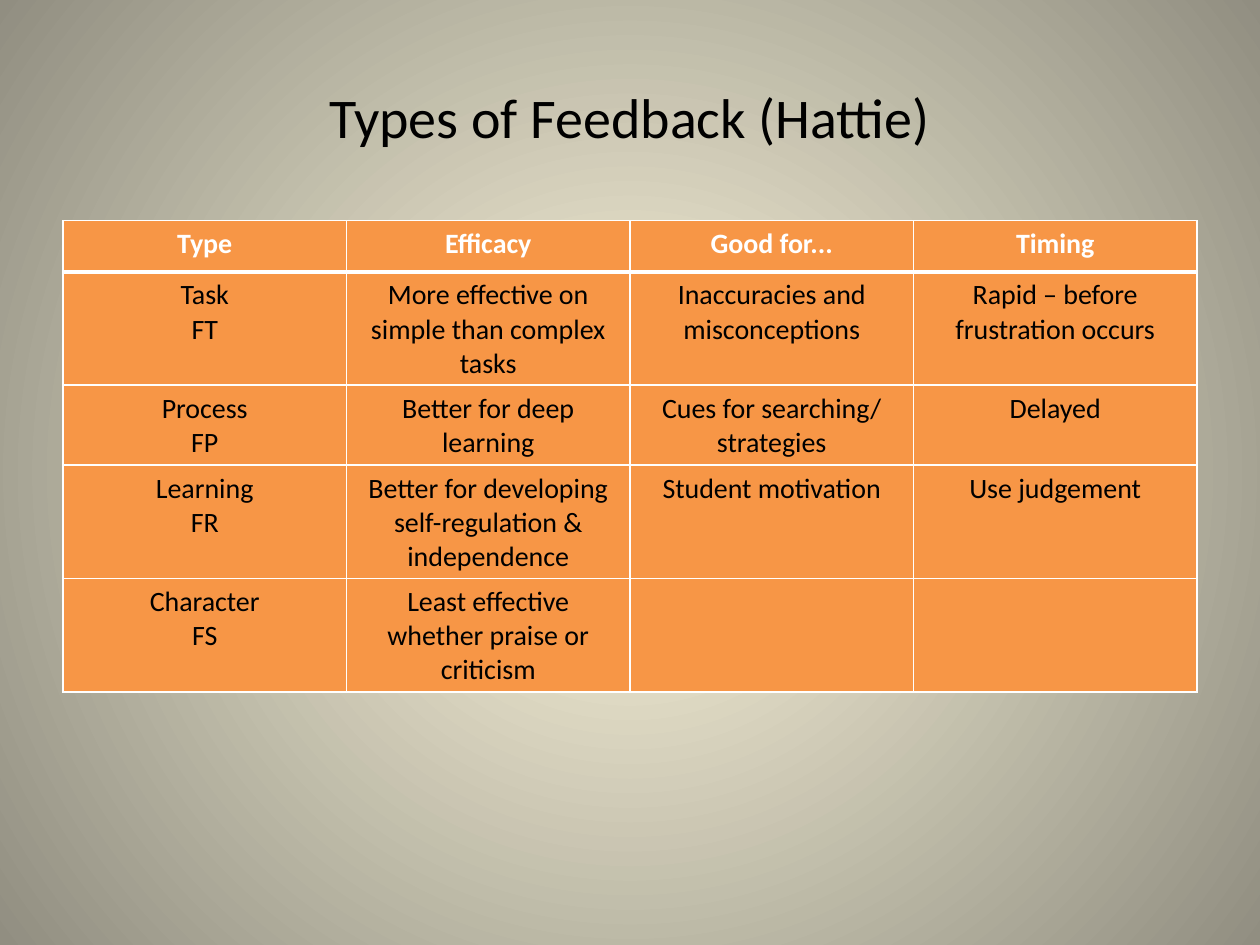
from dataclasses import dataclass

from lxml import etree
from pptx import Presentation
from pptx.dml.color import RGBColor
from pptx.enum.text import MSO_ANCHOR, PP_ALIGN
from pptx.oxml.ns import qn
from pptx.slide import Slide
from pptx.table import _Cell
from pptx.text.text import TextFrame
from pptx.util import Cm, Pt

CENTER = PP_ALIGN.CENTER
MIDDLE = MSO_ANCHOR.MIDDLE
BLACK = RGBColor(0x00, 0x00, 0x00)
WHITE = RGBColor(0xFF, 0xFF, 0xFF)
ORANGE = RGBColor(0xF7, 0x96, 0x46)
CREAM = RGBColor(0xFC, 0xF7, 0xDD)
STONE = RGBColor(0x91, 0x8E, 0x81)
FONT = "Calibri"
LEFT, WIDTH = Cm(1.27), Cm(22.86)


@dataclass(frozen=True)
class Style:
    size: int
    color: RGBColor
    bold: bool = False


@dataclass(frozen=True)
class Kind:
    name: str
    code: str
    effect: str
    use: str = ""
    timing: str = ""

    def cells(self) -> list[list[str]]:
        return [[self.name, self.code], [self.effect], [self.use], [self.timing]]


TITLE = Style(32, BLACK)
HEAD = Style(16, WHITE, True)
BODY = Style(16, BLACK)
HEADS = ["Type", "Efficacy", "Good for...", "Timing"]
KINDS = [
    Kind("Task", "FT", "More effective on simple than complex tasks",
         "Inaccuracies and misconceptions", "Rapid – before frustration occurs"),
    Kind("Process", "FP", "Better for deep learning",
         "Cues for searching/ strategies", "Delayed"),
    Kind("Learning", "FR", "Better for developing self-regulation & independence",
         "Student motivation", "Use judgement"),
    Kind("Character", "FS", "Least effective whether praise or criticism"),
]


def write(frame: TextFrame, lines: list[str], style: Style) -> None:
    for index, line in enumerate(lines):
        para = frame.paragraphs[0] if index == 0 else frame.add_paragraph()
        para.alignment = CENTER
        if not line:
            continue
        run = para.add_run()
        run.text = line
        run.font.name = FONT
        run.font.size = Pt(style.size)
        run.font.bold = style.bold
        run.font.color.rgb = style.color


def border(cell: _Cell, top: int, bottom: int) -> None:
    props = cell._tc.get_or_add_tcPr()
    sides = {"lnL": 1, "lnR": 1, "lnT": top, "lnB": bottom}
    for index, (side, width) in enumerate(sides.items()):
        line = etree.Element(qn(f"a:{side}"), w=str(Pt(width)))
        fill = etree.SubElement(line, qn("a:solidFill"))
        etree.SubElement(fill, qn("a:srgbClr"), val=str(WHITE))
        props.insert(index, line)


def paint(slide: Slide) -> None:
    fill = slide.background.fill
    fill.gradient()
    for stop, color in zip(fill.gradient_stops, (CREAM, STONE)):
        stop.color.rgb = color
    grad = slide.element.find(f".//{qn('a:gradFill')}")
    grad.remove(grad.find(qn("a:lin")))
    stops = grad.find(qn("a:gsLst"))
    shade = etree.Element(qn("a:path"), {"path": "circle"})
    etree.SubElement(shade, qn("a:fillToRect"), dict.fromkeys("ltrb", "50000"))
    stops.addnext(shade)


def add_title(slide: Slide, text: str) -> None:
    box = slide.shapes.add_textbox(LEFT, Cm(0.76), WIDTH, Cm(3.18))
    frame = box.text_frame
    frame.word_wrap = True
    frame.vertical_anchor = MIDDLE
    write(frame, [text], TITLE)


def add_grid(slide: Slide) -> None:
    rows = [[[head] for head in HEADS]] + [kind.cells() for kind in KINDS]
    high = Cm(1.03)
    table = slide.shapes.add_table(
        len(rows), len(HEADS), LEFT, Cm(4.45), WIDTH, high * len(rows)
    ).table
    for row, texts in enumerate(rows):
        table.rows[row].height = high
        for col, lines in enumerate(texts):
            cell = table.cell(row, col)
            cell.fill.solid()
            cell.fill.fore_color.rgb = ORANGE
            border(cell, 3 if row == 1 else 1, 3 if row == 0 else 1)
            write(cell.text_frame, lines, HEAD if row == 0 else BODY)


def main() -> None:
    deck = Presentation()
    deck.slide_width, deck.slide_height = Cm(25.4), Cm(19.05)
    slide = deck.slides.add_slide(deck.slide_layouts[6])
    paint(slide)
    add_title(slide, "Types of Feedback (Hattie)")
    add_grid(slide)
    deck.save("out.pptx")


if __name__ == "__main__":
    main()
